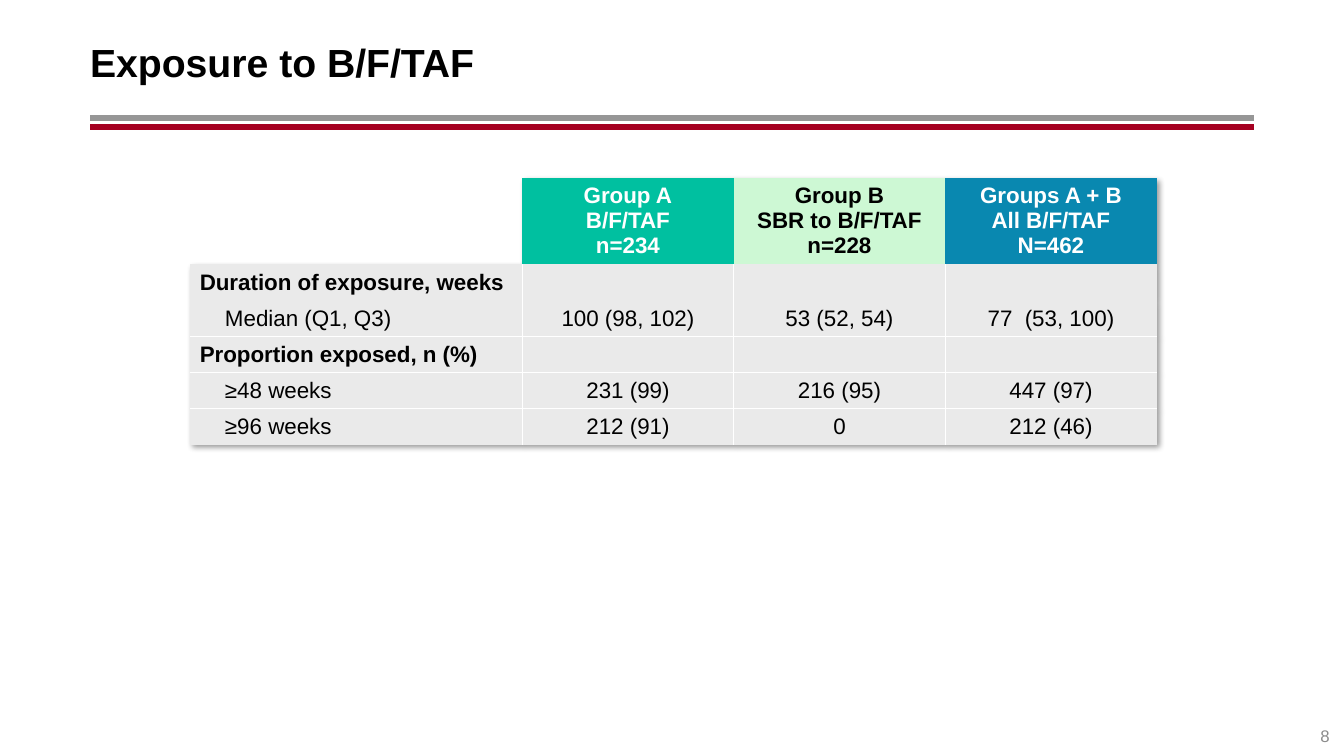
import pptx
import pptx.dml.color
import pptx.enum.shapes
import pptx.enum.text
import pptx.oxml
import pptx.oxml.ns
import pptx.util
from pptx.util import Cm

COLORS = {
    "black": "000000", "white": "FFFFFF", "rule gray": "969696", "rule red": "A50021",
    "page gray": "8C8C8C", "teal": "00C0A0", "mint": "CDF8D4", "blue": "0988B0",
    "body": "EAEAEA",
}
ALIGN = pptx.enum.text.PP_ALIGN
MIDDLE = pptx.enum.text.MSO_ANCHOR.MIDDLE
NAMESPACE = pptx.oxml.ns.nsdecls("a")
NO_STYLE_NO_GRID = "{2D5ABB26-0587-4C30-8999-92F81FD0307C}"


def rgb(name):
    return pptx.dml.color.RGBColor.from_string(COLORS[name])


def write(text_frame, text, size, color, bold=False, align=ALIGN.LEFT):
    """Fill a text frame, one paragraph per line of text, in a single style."""
    text_frame.text = text
    for paragraph in text_frame.paragraphs:
        paragraph.alignment = align
        paragraph.font.name = "Arial"
        paragraph.font.size = pptx.util.Pt(size)
        paragraph.font.bold = bold
        paragraph.font.color.rgb = rgb(color)


presentation = pptx.Presentation()
presentation.slide_width = Cm(33.87)
presentation.slide_height = Cm(19.05)
slide = presentation.slides.add_slide(presentation.slide_layouts[6])

# Double rule under the title
for y, color in ((2.97, "rule gray"), (3.19, "rule red")):
    rule = slide.shapes.add_connector(
        pptx.enum.shapes.MSO_CONNECTOR.STRAIGHT, Cm(2.27), Cm(y), Cm(31.6), Cm(y))
    rule.line.width = pptx.util.Pt(4.25)
    rule.line.color.rgb = rgb(color)
    rule._element.spPr.append(pptx.oxml.parse_xml(f"<a:effectLst {NAMESPACE}/>"))

# Title and page number
title = slide.shapes.add_textbox(Cm(2.27), Cm(0.46), Cm(29.36), Cm(2.18)).text_frame
title.word_wrap = True
title.vertical_anchor = MIDDLE
title.margin_left = title.margin_right = 0
write(title, "Exposure to B/F/TAF", 28, "black", bold=True)

page_number = slide.shapes.add_textbox(Cm(31.6), Cm(18.03), Cm(2.16), Cm(1.02)).text_frame
page_number.word_wrap = True
page_number.vertical_anchor = MIDDLE
write(page_number, "8", 12, "page gray", align=ALIGN.RIGHT)

# Exposure table
headers = [
    ("", None, "black"),
    ("Group A\nB/F/TAF\nn=234", "teal", "white"),
    ("Group B\nSBR to B/F/TAF\nn=228", "mint", "black"),
    ("Groups A + B\vAll B/F/TAF\nN=462", "blue", "white"),
]
body = [
    ("Duration of exposure, weeks", "", "", ""),
    ("Median (Q1, Q3)", "100 (98, 102)", "53 (52, 54)", "77  (53, 100)"),
    ("Proportion exposed, n (%)", "", "", ""),
    ("≥48 weeks", "231 (99)", "216 (95)", "447 (97)"),
    ("≥96 weeks", "212 (91)", "0", "212 (46)"),
]
column_widths = [8.38] + [5.33] * 3
row_heights = [2.18] + [0.91] * len(body)
table = slide.shapes.add_table(
    len(row_heights), len(column_widths), Cm(4.78), Cm(4.48),
    Cm(sum(column_widths)), Cm(sum(row_heights))).table
table.first_row = table.horz_banding = False
for column, width in zip(table.columns, column_widths):
    column.width = Cm(width)
for row, height in zip(table.rows, row_heights):
    row.height = Cm(height)

table_properties = table._tbl.tblPr
style_id = table_properties.find(pptx.oxml.ns.qn("a:tableStyleId"))
style_id.text = NO_STYLE_NO_GRID
style_id.addprevious(pptx.oxml.parse_xml(
    f'<a:effectLst {NAMESPACE}><a:outerShdw blurRad="50800" dist="38100" dir="2700000" '
    'algn="tl" rotWithShape="0"><a:srgbClr val="000000"><a:alpha val="40000"/></a:srgbClr>'
    '</a:outerShdw></a:effectLst>'))

for column_index, (text, fill, color) in enumerate(headers):
    cell = table.cell(0, column_index)
    cell.vertical_anchor = MIDDLE
    cell.margin_top = cell.margin_bottom = 0
    write(cell.text_frame, text, 16, color, bold=True, align=ALIGN.CENTER)
    if fill:
        cell.fill.solid()
        cell.fill.fore_color.rgb = rgb(fill)
    else:
        cell.fill.background()

for row_index, values in enumerate(body, start=1):
    is_heading = not any(values[1:])
    for column_index, text in enumerate(values):
        cell = table.cell(row_index, column_index)
        cell.vertical_anchor = MIDDLE
        cell.margin_top = cell.margin_bottom = 0
        is_label = column_index == 0
        if is_label and not is_heading:
            cell.margin_left = Cm(0.89)
        write(cell.text_frame, text, 16, "black", bold=is_heading,
              align=ALIGN.LEFT if is_label else ALIGN.CENTER)

        # White inner borders, none between the first heading and its median
        borders = {
            "lnL": column_index > 0,
            "lnR": column_index < len(values) - 1,
            "lnT": row_index > 2,
            "lnB": 1 < row_index < len(body),
        }
        for tag, shown in borders.items():
            if shown:
                cell._tc.get_or_add_tcPr().append(pptx.oxml.parse_xml(
                    f'<a:{tag} {NAMESPACE} w="12700"><a:solidFill>'
                    f'<a:srgbClr val="{COLORS["white"]}"/></a:solidFill></a:{tag}>'))
        cell.fill.solid()
        cell.fill.fore_color.rgb = rgb("body")

presentation.save("out.pptx")
